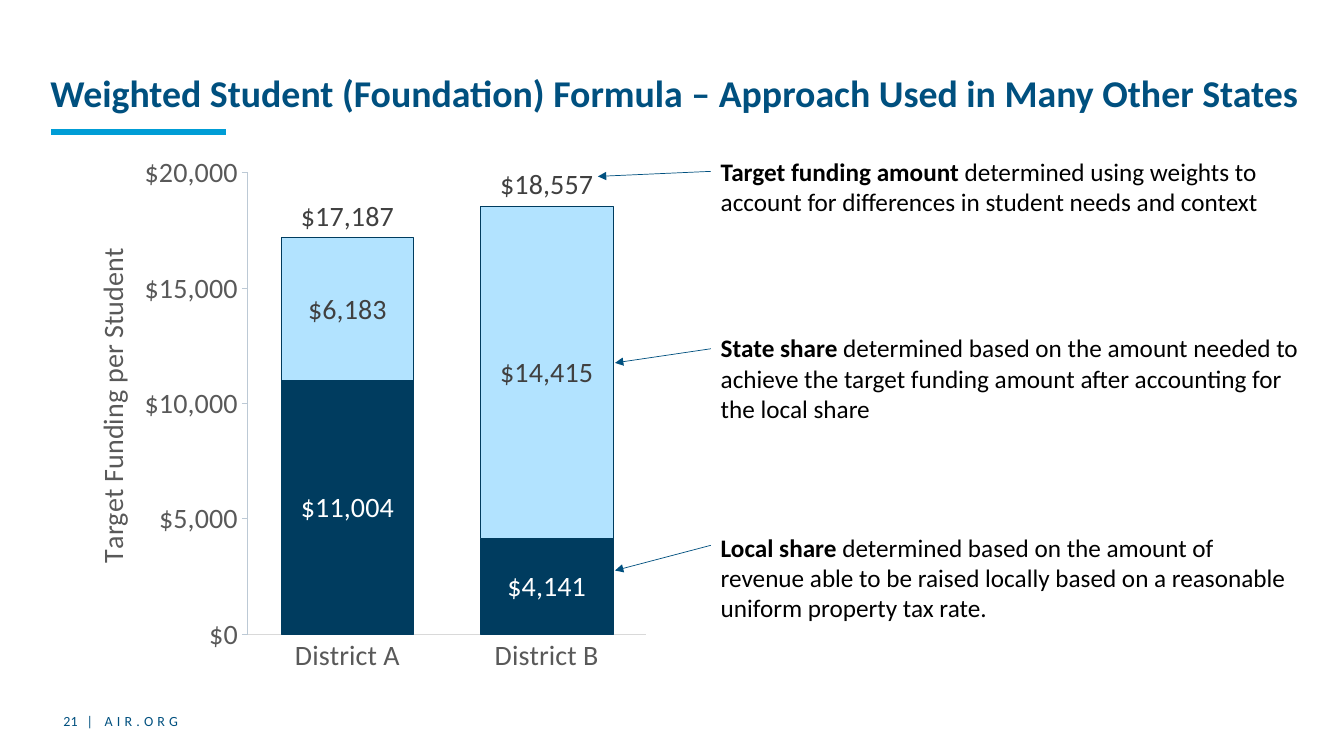
from lxml import etree
from pptx import Presentation
from pptx.chart.data import CategoryChartData
from pptx.dml.color import RGBColor
from pptx.enum.chart import XL_CHART_TYPE, XL_LABEL_POSITION, XL_MARKER_STYLE, XL_TICK_MARK
from pptx.enum.shapes import MSO_CONNECTOR
from pptx.enum.text import MSO_ANCHOR, PP_ALIGN
from pptx.oxml import parse_xml
from pptx.oxml.ns import nsdecls, qn
from pptx.util import Emu, Pt

EMU_PER_PX = 9144  # 100 px to the inch
FONT = "Calibri"
BLUE, SKY, NAVY, PALE = "00507F", "009DD6", "003C5F", "B2E3FF"
BLACK, WHITE, DARK_GREY, GREY = "000000", "FFFFFF", "404040", "595959"
DOLLARS = '"$"#,##0'


def px(length):
    return Emu(length * EMU_PER_PX)


def rgb(code):
    return RGBColor.from_string(code)


def set_all(target, formats):
    for name, value in formats.items():
        setattr(target, name, value)


def style_font(font, size, color, bold=False):
    set_all(font, {"name": FONT, "size": Pt(size), "bold": bold})
    font.color.rgb = rgb(color)


def style_line(line, color, width):
    line.color.rgb = rgb(color)
    line.width = Pt(width)


def add_text(slide, box, runs, size, color, margins=(10, 5, 10, 5),
             anchor=MSO_ANCHOR.TOP, wrap=True, **paragraph_formats):
    """Write (text, bold) runs as one paragraph in the box."""
    frame = slide.shapes.add_textbox(*map(px, box)).text_frame
    sides = ("margin_left", "margin_top", "margin_right", "margin_bottom")
    set_all(frame, dict(zip(sides, map(px, margins))))
    set_all(frame, {"word_wrap": wrap, "vertical_anchor": anchor})
    paragraph = frame.paragraphs[0]
    set_all(paragraph, paragraph_formats)
    for text, bold in runs:
        run = paragraph.add_run()
        run.text = text
        style_font(run.font, size, color, bold)
    return paragraph


def add_line(slide, start, end, color, width, arrow=False):
    connector = slide.shapes.add_connector(
        MSO_CONNECTOR.STRAIGHT, *map(px, (*start, *end)))
    style_line(connector.line, color, width)
    if arrow:
        etree.SubElement(connector.line._get_or_add_ln(), qn("a:tailEnd"), type="triangle")
    etree.SubElement(connector._element.spPr, qn("a:effectLst"))


def add_header(slide, box):
    left, top, width, height = box
    add_text(slide, box,
             [("Weighted Student (Foundation) Formula – Approach Used in Many Other States", True)],
             27, BLUE, margins=(0, 0, 0, 0), anchor=MSO_ANCHOR.BOTTOM, line_spacing=0.9)
    rule_y = top + height + 16
    add_line(slide, (left + 1, rule_y), (left + 174, rule_y), SKY, 4.5)


def add_footer(slide, box):
    left, top, width, height = box
    add_text(slide, (left, top + 10, 27, 27), [("21", False)], 10, BLUE,
             margins=(0, 5, 0, 5), anchor=MSO_ANCHOR.MIDDLE, wrap=False,
             alignment=PP_ALIGN.RIGHT)
    site = add_text(slide, (left + 36, top, width - 36, height), [("| AIR.ORG", False)],
                    10, BLUE, margins=(0, 4, 7, 4), anchor=MSO_ANCHOR.MIDDLE)
    site.runs[0].font._element.set("spc", "300")


def move_totals_to_line(chart):
    """Turn the last column series into a line on the same axes."""
    columns = chart.plots[0]._element
    totals = columns.findall(qn("c:ser"))[-1]
    for column_only in totals.findall(qn("c:invertIfNegative")):
        totals.remove(column_only)
    line_plot = parse_xml(
        f'<c:lineChart {nsdecls("c")}><c:grouping val="standard"/>'
        '<c:varyColors val="0"/><c:marker val="1"/></c:lineChart>')
    line_plot.insert(2, totals)
    for axis_id in columns.findall(qn("c:axId")):
        etree.SubElement(line_plot, qn("c:axId"), val=axis_id.get("val"))
    columns.addnext(line_plot)


def manual_layout(inner=False, **fractions):
    parts = '<c:layoutTarget val="inner"/>' if inner else ""
    parts += '<c:xMode val="edge"/><c:yMode val="edge"/>'
    parts += "".join(f'<c:{name} val="{value}"/>' for name, value in fractions.items())
    return parse_xml(f'<c:layout {nsdecls("c")}><c:manualLayout>{parts}'
                     '</c:manualLayout></c:layout>')


def place(parent, layout, after=None):
    for old in parent.findall(qn("c:layout")):
        parent.remove(old)
    if after is None:
        parent.insert(0, layout)
    else:
        parent.find(qn(after)).addnext(layout)


def style_labels(series, color, position):
    labels = series.data_labels
    set_all(labels, {"show_value": True, "number_format": DOLLARS,
                     "number_format_is_linked": False, "position": position})
    style_font(labels.font, 20, color)


def style_axes(chart):
    districts, funding = chart.category_axis, chart.value_axis
    set_all(districts, {"major_tick_mark": XL_TICK_MARK.NONE, "has_major_gridlines": False})
    set_all(funding, {"minimum_scale": 0, "maximum_scale": 20000, "major_unit": 5000,
                      "major_tick_mark": XL_TICK_MARK.OUTSIDE,
                      "has_major_gridlines": False, "has_title": True})
    set_all(funding.tick_labels, {"number_format": DOLLARS, "number_format_is_linked": False})
    for axis, color in ((districts, "D9D9D9"), (funding, "BCC9D5")):
        style_font(axis.tick_labels.font, 20, GREY)
        style_line(axis.format.line, color, 0.75)
    title = funding.axis_title
    caption = title.text_frame.paragraphs[0].add_run()
    caption.text = "Target Funding per Student"
    style_font(caption.font, 20, GREY)
    title.text_frame._txBody.bodyPr.set("rot", "-5400000")
    title.text_frame._txBody.bodyPr.set("vert", "horz")
    place(title._element, manual_layout(x=0.04, y=0.18), after="c:tx")


def add_funding_chart(slide, box):
    data = CategoryChartData(number_format=DOLLARS)
    data.categories = ["District A", "District B"]
    data.add_series("Local share", (11004, 4141))
    data.add_series("State share", (6183, 14415))
    data.add_series("Target funding", (17187, 18557))
    chart = slide.shapes.add_chart(XL_CHART_TYPE.COLUMN_STACKED, *map(px, box), data).chart
    set_all(chart, {"has_legend": False, "has_title": False})
    style_font(chart.font, 20, BLACK)
    move_totals_to_line(chart)

    columns, totals = chart.plots
    set_all(columns, {"gap_width": 50, "overlap": 100, "vary_by_categories": False})
    for share, fill, label_color in zip(columns.series, (NAVY, PALE), (WHITE, DARK_GREY)):
        share.format.fill.solid()
        share.format.fill.fore_color.rgb = rgb(fill)
        style_line(share.format.line, NAVY, 0.75)
        style_labels(share, label_color, XL_LABEL_POSITION.CENTER)
    target = totals.series[0]
    target.smooth = False
    target.marker.style = XL_MARKER_STYLE.NONE
    target.format.line.fill.background()
    style_labels(target, DARK_GREY, XL_LABEL_POSITION.ABOVE)

    style_axes(chart)
    plot_area = chart._chartSpace.chart.plotArea
    place(plot_area, manual_layout(inner=True, x=0.31, y=0.05, w=0.67, h=0.86))


def add_callout(slide, box, term, explanation, arrow_drop, arrow_tip):
    left, top = box[:2]
    add_text(slide, box, [(term, True), (explanation, False)], 18, BLACK)
    add_line(slide, (left, top + arrow_drop), arrow_tip, BLUE, 0.5, arrow=True)


def main():
    deck = Presentation()
    set_all(deck, {"slide_width": px(1333), "slide_height": px(750)})
    slide = deck.slides.add_slide(deck.slide_layouts[6])
    add_header(slide, (50, 0, 1250, 115))
    add_footer(slide, (50, 692, 300, 47))
    add_funding_chart(slide, (63, 145, 590, 532))
    callouts = (
        ((705, 150, 609, 71), "Target funding amount",
         " determined using weights to account for differences in student needs and context",
         20, (593, 175)),
        ((705, 325, 595, 101), "State share",
         " determined based on the amount needed to achieve the target funding amount "
         "after accounting for the local share", 21, (610, 360)),
        ((705, 523, 595, 101), "Local share",
         " determined based on the amount of revenue able to be raised locally based on "
         "a reasonable uniform property tax rate.", 18, (610, 566)),
    )
    for callout in callouts:
        add_callout(slide, *callout)
    deck.save("out.pptx")


if __name__ == "__main__":
    main()
